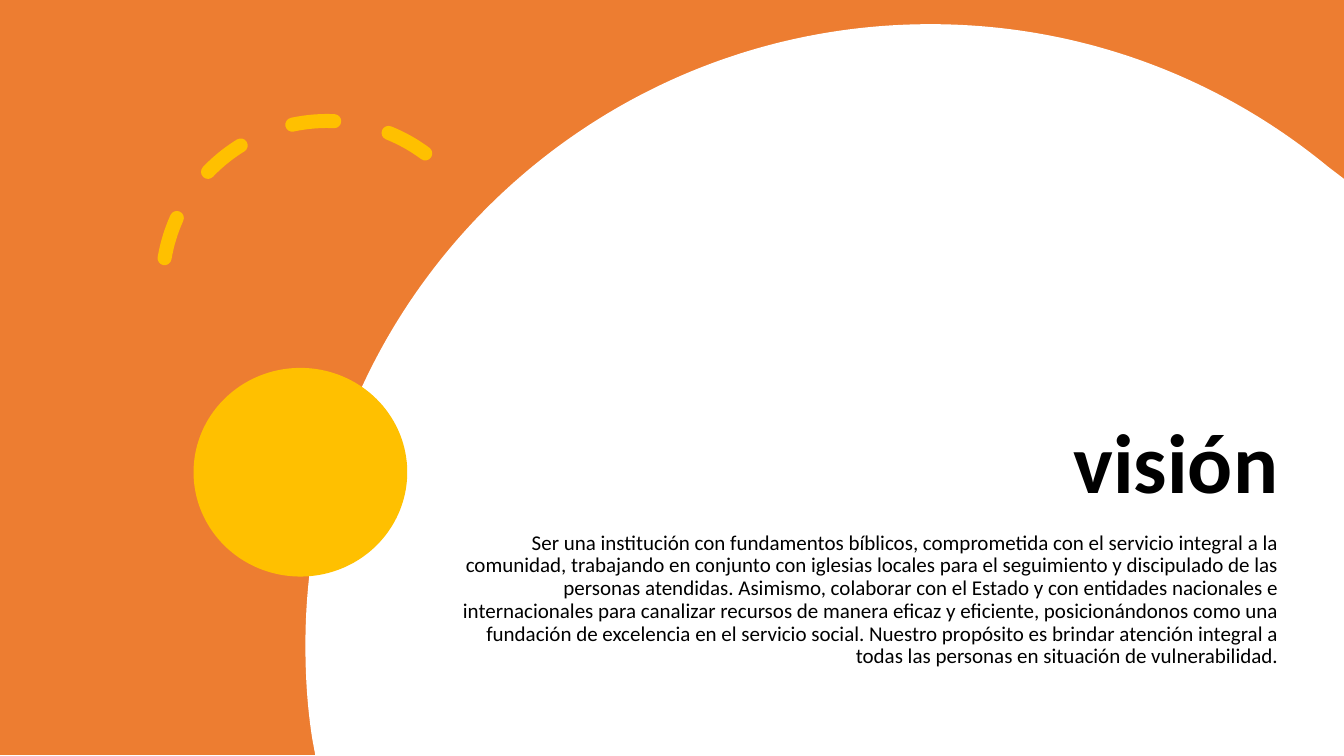
"""Builds the "visión" slide: a white disc on orange with yellow accents."""
from dataclasses import dataclass

from lxml import etree
from pptx import Presentation, util as u
from pptx.dml.color import RGBColor
from pptx.enum import dml, shapes, text
from pptx.oxml.ns import qn

PX = u.Inches(1) // 100
WIDTH, HEIGHT = 1334, 750


@dataclass(frozen=True)
class Theme:
    orange: RGBColor = RGBColor(0xED, 0x7D, 0x31)
    white: RGBColor = RGBColor(0xFF, 0xFF, 0xFF)
    yellow: RGBColor = RGBColor(0xFF, 0xC0, 0x00)
    black: RGBColor = RGBColor(0x00, 0x00, 0x00)
    font: str = "Calibri"
    title_size: int = 60
    body_size: int = 15


theme = Theme()


def paint(shape, color):
    shape.shadow.inherit = False
    shape.fill.solid()
    shape.fill.fore_color.rgb = color
    shape.line.fill.background()


def add_text(top, height, anchor, words, size, bold):
    box = page.shapes.add_textbox(442 * PX, top * PX, 836 * PX, height * PX)
    frame = box.text_frame
    frame.word_wrap = True
    frame.vertical_anchor = anchor
    para = frame.paragraphs[0]
    para.text = words
    para.alignment = text.PP_ALIGN.RIGHT
    para.line_spacing = 0.9
    para.font.name = theme.font
    para.font.size = u.Pt(size)
    para.font.bold = bold
    para.font.color.rgb = theme.black


deck = Presentation()
deck.slide_width, deck.slide_height = u.Emu(12192000), u.Emu(HEIGHT * PX)
page = deck.slides.add_slide(deck.slide_layouts[6])

backdrop = page.shapes.add_shape(shapes.MSO_SHAPE.RECTANGLE, 0, -PX, WIDTH * PX, HEIGHT * PX)
paint(backdrop, theme.orange)

right_curve = [(1073, 24), (1210, 77), (1317, 165)]
edges = [(WIDTH, 178), (WIDTH, HEIGHT), (313, HEIGHT), (310, 734)]
lower_curve = [(305, 703), (303, 672), (303, 640)]
upper_curve = [(303, 300), (581, 24), (923, 24)]
builder = page.shapes.build_freeform(923, 24, scale=PX)
builder.add_line_segments(right_curve + edges + lower_curve + upper_curve, close=True)
disc = builder.convert_to_shape()
paint(disc, theme.white)
segments = list(disc.element.iter(qn("a:lnTo")))
for first in (0, 7, 10):
    curve = etree.Element(qn("a:cubicBezTo"))
    segments[first].addprevious(curve)
    for segment in segments[first:first + 3]:
        curve.append(segment[0])
        segment.getparent().remove(segment)

sun = page.shapes.add_shape(shapes.MSO_SHAPE.OVAL, 192 * PX, 365 * PX, 212 * PX, 207 * PX)
paint(sun, theme.yellow)

arc = page.shapes.add_shape(shapes.MSO_SHAPE.ARC, 161 * PX, 120 * PX, 327 * PX, 327 * PX)
arc.shadow.inherit = False
arc.rotation = 308.7
arc.adjustments[0] = 144.56
arc.adjustments[1] = 2.28
arc.fill.background()
arc.line.color.rgb = theme.yellow
arc.line.width = u.Pt(10)
arc.line.dash_style = dml.MSO_LINE.DASH
arc.element.spPr.find(qn("a:ln")).set("cap", "rnd")

add_text(212, 301, text.MSO_ANCHOR.BOTTOM, "visión", theme.title_size, True)
add_text(
    523, 145, text.MSO_ANCHOR.TOP,
    "Ser una institución con fundamentos bíblicos, comprometida con el servicio integral a la "
    "comunidad, trabajando en conjunto con iglesias locales para el seguimiento y discipulado de "
    "las personas atendidas. Asimismo, colaborar con el Estado y con entidades nacionales e "
    "internacionales para canalizar recursos de manera eficaz y eficiente, posicionándonos como "
    "una fundación de excelencia en el servicio social. Nuestro propósito es brindar atención "
    "integral a todas las personas en situación de vulnerabilidad.",
    theme.body_size, False)

deck.save("out.pptx")
